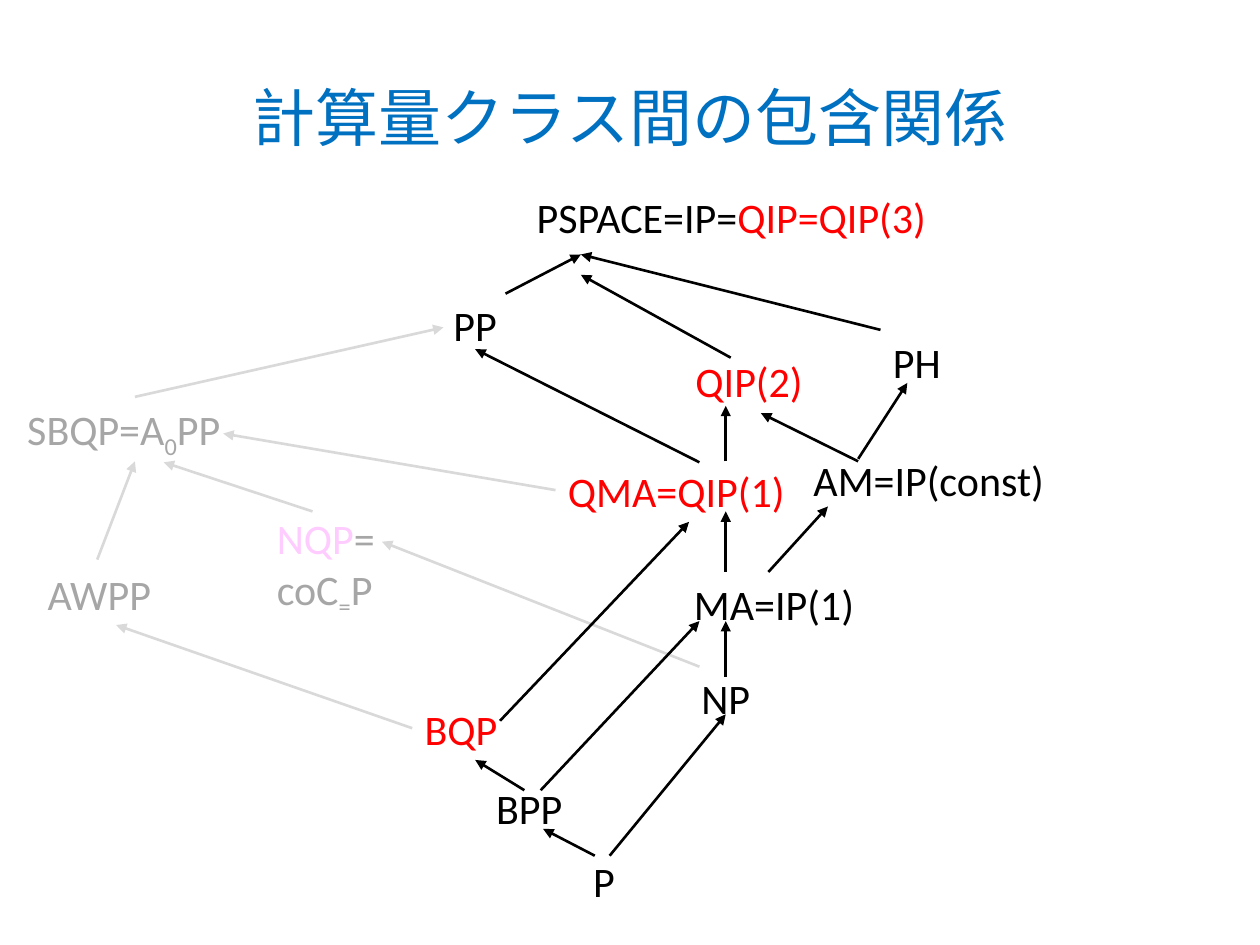
from lxml import etree
from pptx import Presentation
from pptx.dml.color import RGBColor
from pptx.enum.shapes import MSO_CONNECTOR
from pptx.enum.text import MSO_ANCHOR, PP_ALIGN
from pptx.oxml.ns import qn
from pptx.util import Cm, Pt

STRAIGHT = MSO_CONNECTOR.STRAIGHT
MIDDLE = MSO_ANCHOR.MIDDLE
CENTER = PP_ALIGN.CENTER

BLACK, RED, BLUE = "000000", "FF0000", "0070C0"
GREY, PALE_GREY, PINK = "A6A6A6", "D9D9D9", "FFCCFF"


def rgb(value):
    return RGBColor.from_string(value)


def add_run(p, text, size, color, subscript=False):
    r = p.add_run()
    r.text = text
    for name, value in {"name": "Calibri", "size": Pt(size)}.items():
        setattr(r.font, name, value)
    r.font.color.rgb = rgb(color)
    if subscript:
        r.font._element.set("baseline", "-25000")


prs = Presentation()
prs.slide_width, prs.slide_height = Cm(25.4), Cm(19.05)
s = prs.slides.add_slide(prs.slide_layouts[5])

# Title
title = s.shapes.title
frame = {"left": 1.27, "top": 0.76, "width": 22.86, "height": 3.18}
for name, value in frame.items():
    setattr(title, name, Cm(value))
title.text_frame.vertical_anchor = MIDDLE
p = title.text_frame.paragraphs[0]
p.alignment = CENTER
add_run(p, "計算量クラス間の包含関係", 36, BLUE)

# Complexity classes: left, top, width, height, runs (text, colour, subscript)
classes = [
    (11.71, 17.12, 1.6, 1.27, [("P", BLACK)]),
    (13.89, 13.44, 1.6, 1.27, [("NP", BLACK)]),
    (9.75, 15.65, 1.96, 1.27, [("BPP", BLACK)]),
    (8.31, 14.05, 2.57, 1.27, [("BQP", RED)]),
    (11.2, 9.25, 5.31, 1.27, [("QMA=QIP(1)", RED)]),
    (13.74, 11.53, 4.06, 1.27, [("MA=IP(1)", BLACK)]),
    (8.89, 5.92, 2.57, 1.27, [("PP", BLACK)]),
    (10.57, 3.73, 9.12, 1.27, [("PSPACE=IP=", BLACK), ("QIP=QIP(3)", RED)]),
    (17.75, 6.65, 2.57, 1.27, [("PH", BLACK)]),
    (13.77, 7.04, 3.12, 1.27, [("QIP(2)", RED)]),
    (16.15, 9.04, 5.56, 1.27, [("AM=IP(const)", BLACK)]),
    (0.71, 11.33, 3.28, 1.27, [("AWPP", GREY)]),
    (0.3, 8, 4.85, 1.27, [("SBQP=A", GREY), ("0", GREY, True), ("PP", GREY)]),
    (5.33, 10.21, 2.57, 2.31,
     [("NQP", PINK), ("=coC", GREY), ("=", GREY, True), ("P", GREY)]),
]
for left, top, width, height, runs in classes:
    sp = s.shapes.add_textbox(Cm(left), Cm(top), Cm(width), Cm(height))
    tf = sp.text_frame
    tf.word_wrap = True
    for text, color, *subscript in runs:
        add_run(tf.paragraphs[0], text, 24, color, *subscript)

# Inclusions: each arrow runs from the smaller class to the larger one
inclusions = {
    PALE_GREY: [
        (1.96, 11.28, 2.72, 9.3),     # AWPP - SBQP
        (2.72, 8, 8.94, 6.6),         # SBQP - PP
        (8.31, 14.68, 2.34, 12.6),    # BQP - AWPP
        (14.1, 13.44, 7.7, 10.92),    # NP - NQP
        (6.3, 10.31, 3.3, 9.32),      # NQP - SBQP
        (11.2, 9.88, 4.5, 8.74),      # QMA - SBQP
    ],
    BLACK: [
        (10.19, 5.92, 11.71, 5.13),   # PP - PSPACE
        (17.75, 6.65, 11.71, 5.13),   # PH - PSPACE
        (14.73, 7.21, 11.71, 5.54),   # QIP(2) - PSPACE
        (11.99, 17.25, 10.95, 16.71), # P - BPP
        (12.29, 17.25, 14.63, 14.4),  # P - NP
        (10.57, 15.93, 9.58, 15.32),  # BPP - BQP
        (10.9, 15.93, 14.1, 12.52),   # BPP - MA
        (14.63, 13.64, 14.63, 12.52), # NP - MA
        (14.63, 11.53, 14.63, 10.31), # MA - QMA
        (15.49, 11.53, 16.69, 10.21), # MA - AM
        (10.08, 14.53, 13.89, 10.52), # BQP - QMA
        (14.63, 9.3, 14.63, 8.18),    # QMA - QIP(2)
        (14.1, 9.32, 9.58, 7.04),     # QMA - PP
        (17.3, 9.25, 18.29, 7.72),    # AM - PH
        (17.3, 9.3, 15.34, 8.33),     # AM - QIP(2)
    ],
}
for color, arrows in inclusions.items():
    for ends in arrows:
        arrow = s.shapes.add_connector(STRAIGHT, *map(Cm, ends))
        arrow.line.color.rgb = rgb(color)
        arrow.line.width = Pt(1.5)
        spPr = arrow._element.spPr
        etree.SubElement(spPr.find(qn("a:ln")), qn("a:tailEnd"), type="triangle")
        etree.SubElement(spPr, qn("a:effectLst"))

prs.save("out.pptx")
